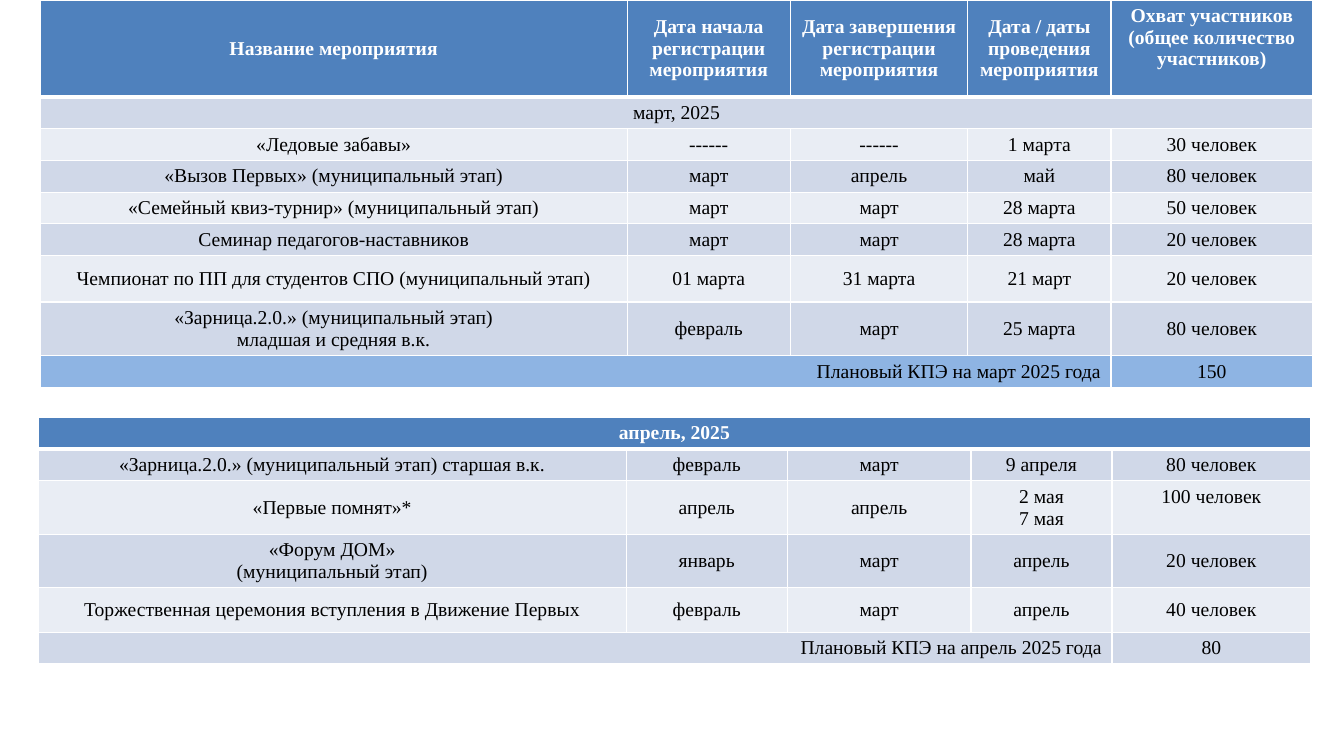
from dataclasses import dataclass

from lxml import etree
from pptx import Presentation
from pptx.dml.color import RGBColor
from pptx.enum import text
from pptx.oxml import ns
from pptx.slide import Slide
from pptx.table import _Cell
from pptx.util import Inches, Pt


@dataclass(frozen=True)
class Theme:
    font: str = "Times New Roman"
    size: int = 14
    header: str = "4F81BD"
    dark_band: str = "D0D8E8"
    light_band: str = "E9EDF4"
    total: str = "8EB4E3"
    header_text: str = "FFFFFF"
    body_text: str = "000000"
    border: str = "FFFFFF"
    thin: int = 1
    thick: int = 3


THEME = Theme()


@dataclass(frozen=True)
class Row:
    height: float
    texts: tuple[str, ...]
    fill: str = ""
    span: int = 1
    align: text.PP_ALIGN = text.PP_ALIGN.CENTER
    last_at_top: bool = False


@dataclass(frozen=True)
class Schedule:
    left: float
    top: float
    widths: tuple[float, ...]
    rows: tuple[Row, ...]


def total_row(label: str, count: str, fill: str) -> Row:
    return Row(0.31, (label, count), fill, span=4, align=text.PP_ALIGN.RIGHT)


MARCH = Schedule(0.4, 0, (5.82, 1.62, 1.76, 1.42, 2), (
    Row(0.96, ("Название мероприятия", "Дата начала регистрации мероприятия",
               "Дата завершения регистрации мероприятия",
               "Дата / даты проведения мероприятия",
               "Охват участников\n(общее количество участников)"), last_at_top=True),
    Row(0.31, ("март, 2025",), span=5),
    Row(0.31, ("«Ледовые забавы»", "------", "------", "1 марта", "30 человек")),
    Row(0.31, ("«Вызов Первых» (муниципальный этап)", "март", "апрель", "май", "80 человек")),
    Row(0.31, ("«Семейный квиз-турнир» (муниципальный этап)", "март", "март",
               "28 марта", "50 человек")),
    Row(0.31, ("Семинар педагогов-наставников", "март", "март", "28 марта", "20 человек")),
    Row(0.46, ("Чемпионат по ПП для студентов СПО (муниципальный этап)", "01 марта",
               "31 марта", "21 март", "20 человек")),
    Row(0.53, ("«Зарница.2.0.» (муниципальный этап)\nмладшая и средняя в.к.", "февраль",
               "март", "25 марта", "80 человек")),
    total_row("Плановый КПЭ на март 2025 года", "150", THEME.total),
))

APRIL = Schedule(0.38, 4.14, (5.83, 1.6, 1.82, 1.4, 1.97), (
    Row(0.31, ("апрель, 2025",), span=5),
    Row(0.31, ("«Зарница.2.0.» (муниципальный этап) старшая в.к.", "февраль", "март",
               "9 апреля", "80 человек")),
    Row(0.53, ("«Первые помнят»*", "апрель", "апрель", "2 мая\n7 мая", "100 человек"),
        last_at_top=True),
    Row(0.53, ("«Форум ДОМ»\n(муниципальный этап)", "январь", "март", "апрель",
               "20 человек")),
    Row(0.44, ("Торжественная церемония вступления в Движение Первых", "февраль", "март",
               "апрель", "40 человек")),
    total_row("Плановый КПЭ на апрель 2025 года", "80", THEME.dark_band),
))


def row_fill(row: Row, index: int) -> str:
    if index == 0:
        return THEME.header
    return row.fill or (THEME.dark_band if index % 2 else THEME.light_band)


def add_borders(cell: _Cell, index: int) -> None:
    properties = cell._tc.get_or_add_tcPr()
    widths = {
        "lnL": THEME.thin,
        "lnR": THEME.thin,
        "lnT": THEME.thick if index == 1 else THEME.thin,
        "lnB": THEME.thick if index == 0 else THEME.thin,
    }
    for side, width in widths.items():
        line = etree.SubElement(properties, ns.qn(f"a:{side}"), w=str(Pt(width)))
        paint = etree.SubElement(line, ns.qn("a:solidFill"))
        etree.SubElement(paint, ns.qn("a:srgbClr"), val=THEME.border)


def write_cell(cell: _Cell, words: str, align: text.PP_ALIGN, is_header: bool) -> None:
    cell.text = words
    for paragraph in cell.text_frame.paragraphs:
        paragraph.alignment = align
        font = paragraph.font
        font.name = THEME.font
        font.size = Pt(THEME.size)
        font.bold = is_header
        font.color.rgb = RGBColor.from_string(
            THEME.header_text if is_header else THEME.body_text)


def draw_schedule(slide: Slide, schedule: Schedule) -> None:
    columns = len(schedule.widths)
    table = slide.shapes.add_table(
        len(schedule.rows), columns, Inches(schedule.left), Inches(schedule.top),
        Inches(sum(schedule.widths)), Inches(sum(row.height for row in schedule.rows)),
    ).table
    table.horz_banding = False
    for column, width in zip(table.columns, schedule.widths):
        column.width = Inches(width)
    for index, row in enumerate(schedule.rows):
        table.rows[index].height = Inches(row.height)
        for position in range(columns):
            cell = table.cell(index, position)
            add_borders(cell, index)
            cell.fill.solid()
            cell.fill.fore_color.rgb = RGBColor.from_string(row_fill(row, index))
            cell.vertical_anchor = text.MSO_ANCHOR.MIDDLE
        if row.span > 1:
            table.cell(index, 0).merge(table.cell(index, row.span - 1))
        for position, words in enumerate(row.texts):
            place = position + row.span - 1 if position else 0
            align = text.PP_ALIGN.CENTER if position else row.align
            write_cell(table.cell(index, place), words, align, index == 0)
        if row.last_at_top:
            table.cell(index, columns - 1).vertical_anchor = text.MSO_ANCHOR.TOP


def main() -> None:
    presentation = Presentation()
    presentation.slide_width = Inches(13.33)
    presentation.slide_height = Inches(7.5)
    slide = presentation.slides.add_slide(presentation.slide_layouts[6])
    for schedule in (MARCH, APRIL):
        draw_schedule(slide, schedule)
    presentation.save("out.pptx")


if __name__ == "__main__":
    main()
